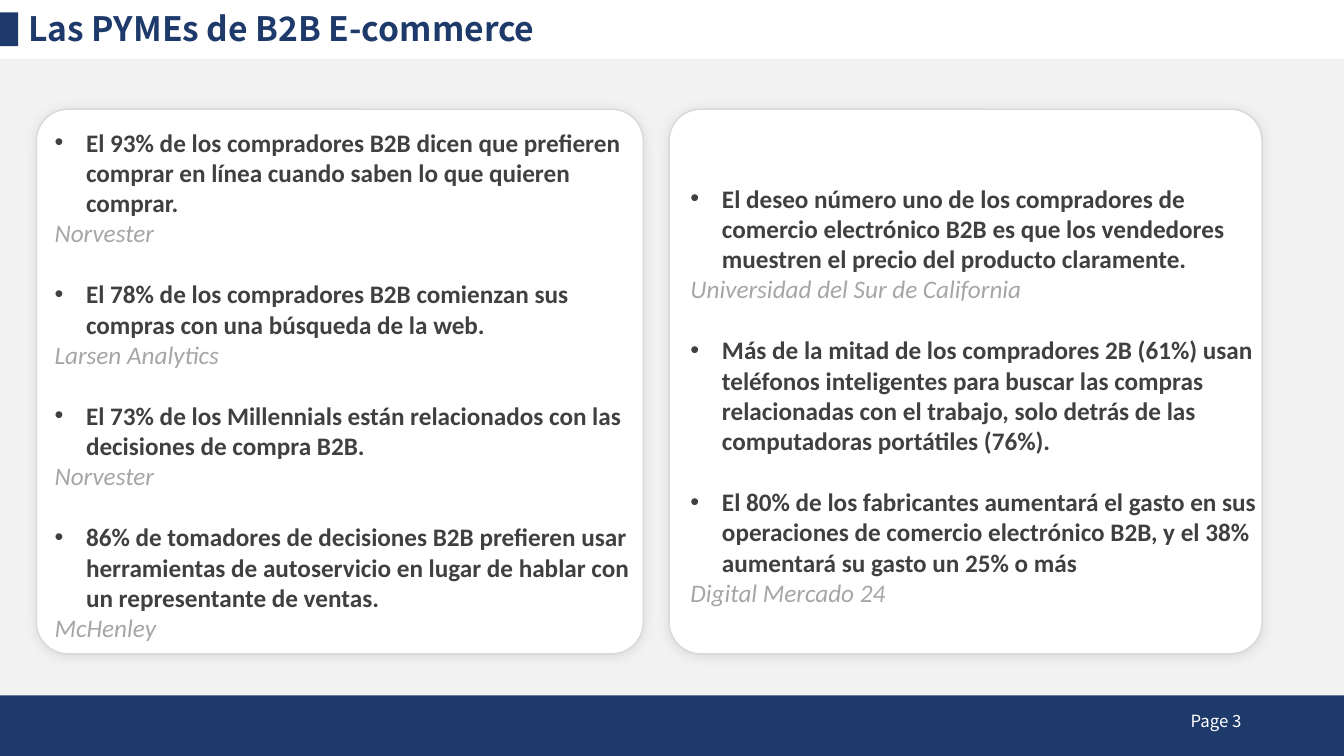
import pptx
import pptx.util
import pptx.dml.color
import pptx.enum.shapes
import pptx.enum.text
import pptx.oxml
import pptx.oxml.ns

Pt = pptx.util.Pt
SHAPE = pptx.enum.shapes.MSO_SHAPE
ANCHOR = pptx.enum.text.MSO_ANCHOR
ALIGN = pptx.enum.text.PP_ALIGN
COLORS = {"navy": "1E3A6A", "white": "FFFFFF", "gray": "F2F2F2",
          "border": "D9D9D9", "ink": "404040", "source": "A6A6A6"}
HEADING_FONT = "Noto Sans CJK SC"
BODY_FONT = "Calibri"
WIDTH, HEIGHT = 960, 540
INDENT = 22.5
FINDING_GAP = 22

LEFT_FINDINGS = [
    ("El 93% de los compradores B2B dicen que prefieren comprar en línea "
     "cuando saben lo que quieren comprar.", "Norvester"),
    ("El 78% de los compradores B2B comienzan sus compras con una búsqueda "
     "de la web.", "Larsen Analytics"),
    ("El 73% de los Millennials están relacionados con las decisiones de "
     "compra B2B.", "Norvester"),
    ("86% de tomadores de decisiones B2B prefieren usar herramientas de "
     "autoservicio en lugar de hablar con un representante de ventas.", "McHenley"),
]
RIGHT_FINDINGS = [
    ("El deseo número uno de los compradores de comercio electrónico B2B es que "
     "los vendedores muestren el precio del producto claramente.",
     "Universidad del Sur de California"),
    ("Más de la mitad de los compradores 2B (61%) usan teléfonos inteligentes "
     "para buscar las compras relacionadas con el trabajo, solo detrás de las "
     "computadoras portátiles (76%).", None),
    ("El 80% de los fabricantes aumentará el gasto en sus operaciones de comercio "
     "electrónico B2B, y el 38% aumentará su gasto un 25% o más",
     "Digital Mercado 24"),
]


def rgb(name):
    """Return the named colour."""
    return pptx.dml.color.RGBColor.from_string(COLORS[name])


def place(part, box):
    """Move a part to a box given in points."""
    part.left, part.top, part.width, part.height = map(Pt, box)


def write_text(paragraph, text, size=18, font=BODY_FONT, color="ink", bold=False,
               italic=False, align=ALIGN.LEFT, before=0, bullet=None):
    """Write formatted text, with an optional hanging bullet."""
    paragraph.alignment = align
    paragraph.space_before = Pt(before)
    properties = paragraph._p.get_or_add_pPr()
    indent = Pt(INDENT) if bullet else 0
    properties.set("marL", str(indent))
    properties.set("indent", str(-indent))
    mark = pptx.oxml.ns.qn("a:buChar" if bullet else "a:buNone")
    mark_element = properties.makeelement(mark, {"char": bullet} if bullet else {})
    properties.append(mark_element)
    run = paragraph.add_run()
    run.text = text
    run.font.size = Pt(size)
    run.font.name = font
    run.font.bold = bold
    run.font.italic = italic
    run.font.color.rgb = rgb(color)


def prepare_frame(holder, anchor=ANCHOR.TOP):
    """Set wrapping, fit and anchor, and return the text frame."""
    frame = holder.text_frame
    frame.word_wrap = True
    frame.auto_size = pptx.enum.text.MSO_AUTO_SIZE.NONE
    frame.vertical_anchor = anchor
    return frame


def add_block(slide, box, fill, kind=SHAPE.RECTANGLE):
    """Add a plain filled shape."""
    block = slide.shapes.add_shape(kind, *map(Pt, box))
    block.shadow.inherit = False
    block.fill.solid()
    block.fill.fore_color.rgb = rgb(fill)
    block.line.fill.background()
    return block


def add_header(slide, box):
    """Place the navy marker and the slide title."""
    left, top, width, height = box
    marker_width = 13
    add_block(slide, (left, top + 8.75, marker_width, 24.25), "navy")
    title = slide.shapes.title
    place(title, (left + marker_width, top + 2, width - marker_width, height - 6))
    write_text(prepare_frame(title).paragraphs[0], "Las PYMEs de B2B E-commerce",
               size=24, font=HEADING_FONT, color="navy", bold=True)
    slide.shapes._spTree.append(title._element)


def add_footer(slide, box):
    """Place the navy band with the page number."""
    left, top, width, height = box
    add_block(slide, box, "navy")
    page = slide.shapes.add_textbox(*map(Pt, (left + width - 282, top + 3.5, 216, 29)))
    write_text(prepare_frame(page, ANCHOR.MIDDLE).paragraphs[0], "Page 3", size=12,
               font=HEADING_FONT, color="white", align=ALIGN.RIGHT)


def add_card(slide, box):
    """Add a white rounded card with a soft shadow."""
    card = add_block(slide, box, "white", SHAPE.ROUNDED_RECTANGLE)
    card.adjustments[0] = 0.058
    card.line.color.rgb = rgb("border")
    card.line.width = Pt(1)
    effects = card._element.spPr.find(pptx.oxml.ns.qn("a:effectLst"))
    effects.append(pptx.oxml.parse_xml(
        f'<a:outerShdw {pptx.oxml.ns.nsdecls("a")} blurRad="{Pt(9)}" dist="{Pt(1)}" '
        'dir="5400000" algn="t" rotWithShape="0"><a:srgbClr val="000000">'
        '<a:alpha val="10000"/></a:srgbClr></a:outerShdw>'))


def add_findings(slide, box, body, findings, offset, text_width):
    """Place a card and its list of findings with their sources."""
    left, top, width, height = box
    add_card(slide, box)
    shift_x, shift_y = offset
    place(body, (left + shift_x, top + shift_y, text_width, height - shift_y))
    frame = prepare_frame(body)
    for index, (finding, source) in enumerate(findings):
        paragraph = frame.add_paragraph() if index else frame.paragraphs[0]
        write_text(paragraph, finding, bold=True, bullet="•",
                   before=FINDING_GAP if index else 0)
        if source:
            write_text(frame.add_paragraph(), source, color="source", italic=True)
    slide.shapes._spTree.append(body._element)


def main():
    """Build and save the presentation."""
    deck = pptx.Presentation()
    deck.slide_width, deck.slide_height = Pt(WIDTH), Pt(HEIGHT)
    slide = deck.slides.add_slide(deck.slide_layouts[3])
    left_body, right_body = slide.placeholders[1], slide.placeholders[2]
    add_block(slide, (0, 42, WIDTH, 496), "gray")
    add_header(slide, (0, 0, WIDTH, 42))
    add_footer(slide, (0, 496.75, WIDTH, 43.25))
    add_findings(slide, (478, 78, 423.5, 389), right_body, RIGHT_FINDINGS,
                 (8, 49), 433.5)
    add_findings(slide, (26, 78, 433.5, 389), left_body, LEFT_FINDINGS,
                 (5.75, 9), 427.75)
    deck.save("out.pptx")


if __name__ == "__main__":
    main()
